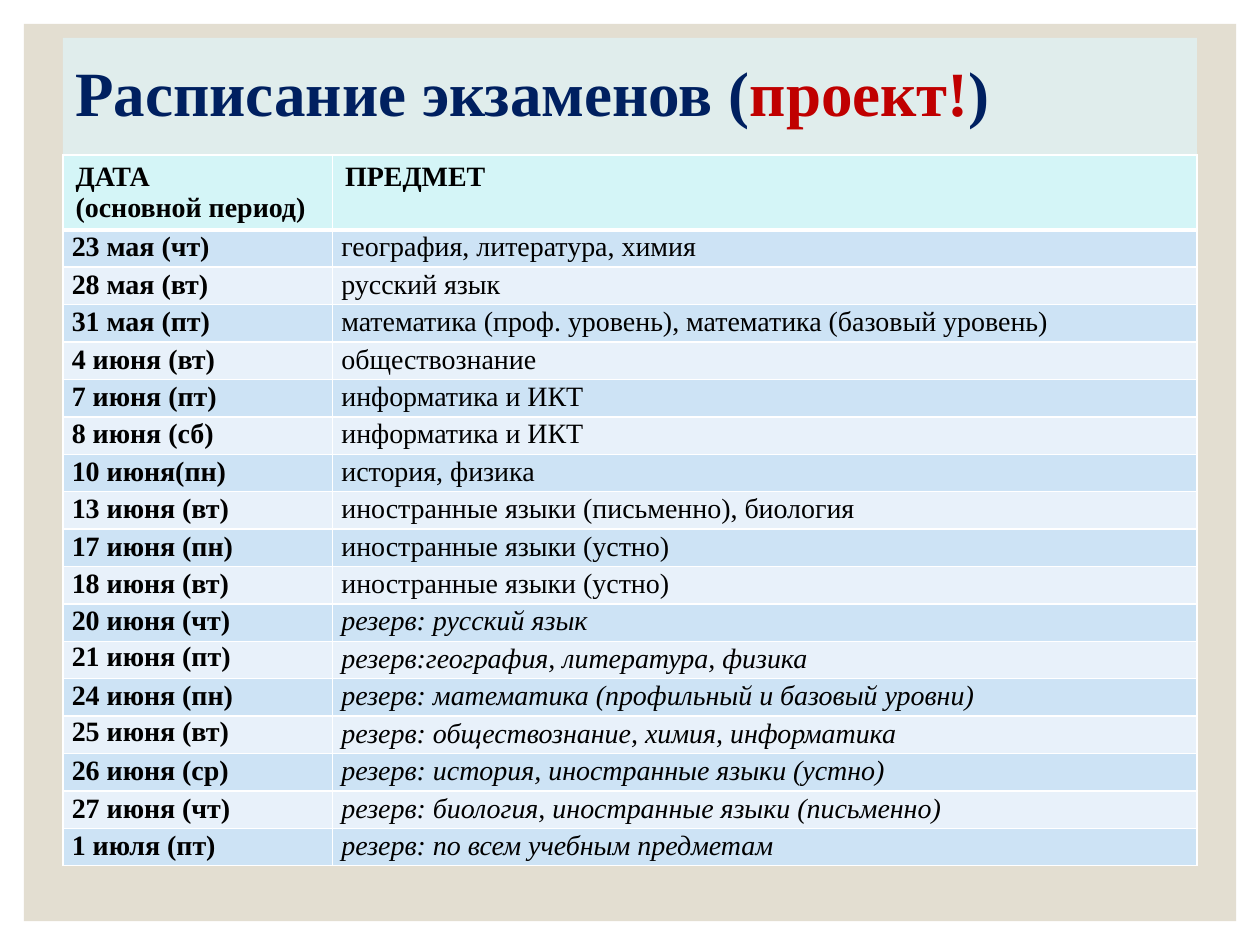
"""Build a slide with the exam timetable."""
from lxml.etree import SubElement
from pptx import Presentation
from pptx.dml.color import RGBColor
from pptx.enum.shapes import MSO_SHAPE as SHAPE
from pptx.enum.text import MSO_ANCHOR as ANCHOR, PP_ALIGN as ALIGN
from pptx.oxml.ns import qn
from pptx.util import Inches, Pt

SAND = RGBColor(0xE3, 0xDE, 0xD1)
MIST = RGBColor(0xE0, 0xED, 0xEC)
NAVY = RGBColor(0x00, 0x20, 0x60)
RED = RGBColor(0xC0, 0x00, 0x00)
BLACK = RGBColor(0x00, 0x00, 0x00)
WHITE = RGBColor(0xFF, 0xFF, 0xFF)
AQUA = RGBColor(0xD4, 0xF5, 0xF7)
BLUE = RGBColor(0xCD, 0xE3, 0xF5)
PALE = RGBColor(0xE8, 0xF1, 0xFA)

EXAMS = [
    ("23 мая (чт)", "география, литература, химия"),
    ("28 мая (вт)", "русский язык"),
    ("31 мая (пт)", "математика (проф. уровень), математика (базовый уровень)"),
    ("4 июня (вт)", "обществознание"),
    ("7 июня (пт)", "информатика и ИКТ"),
    ("8 июня (сб)", "информатика и ИКТ"),
    ("10 июня(пн)", "история, физика"),
    ("13 июня (вт)", "иностранные языки (письменно), биология"),
    ("17 июня (пн)", "иностранные языки (устно)"),
    ("18 июня (вт)", "иностранные языки (устно)"),
    ("20 июня (чт)", "резерв: русский язык"),
    ("21 июня (пт)", "резерв:география, литература, физика"),
    ("24 июня (пн)", "резерв: математика (профильный и базовый уровни)"),
    ("25 июня (вт)", "резерв: обществознание, химия, информатика"),
    ("26 июня (ср)", "резерв: история, иностранные языки (устно)"),
    ("27 июня (чт)", "резерв: биология, иностранные языки (письменно)"),
    ("1 июля (пт)", "резерв: по всем учебным предметам"),
]
SINGLE_SPACED = ("21 июня (пт)", "25 июня (вт)")
HEADER = ("ДАТА\n(основной период)", "ПРЕДМЕТ")
HEADER_H, TABLE_H = 0.59, 5.64


def add_run(p, text, size, color, bold=True, italic=False):
    r = p.add_run()
    r.text = text
    font = {"name": "Times New Roman", "size": Pt(size), "bold": bold, "italic": italic}
    for name, value in font.items():
        setattr(r.font, name, value)
    r.font.color.rgb = color


def style_cell(cell, color, bottom, inset_x, inset_y):
    tc_pr = cell._tc.get_or_add_tcPr()
    for side, width in (("lnL", 1), ("lnR", 1), ("lnT", 1), ("lnB", bottom)):
        ln = SubElement(tc_pr, qn(f"a:{side}"), w=str(Pt(width)))
        SubElement(SubElement(ln, qn("a:solidFill")), qn("a:srgbClr"), val=str(WHITE))
    cell.fill.solid()
    cell.fill.fore_color.rgb = color
    cell.margin_left = cell.margin_right = Inches(inset_x)
    cell.margin_top = cell.margin_bottom = Inches(inset_y)


prs = Presentation()
prs.slide_width, prs.slide_height = Inches(10), Inches(7.5)
s = prs.slides.add_slide(prs.slide_layouts[6])

for box, color in (((0.19, 0.19, 9.62, 7.12), SAND), ((0.5, 0.3, 9, 0.93), MIST)):
    sp = s.shapes.add_shape(SHAPE.RECTANGLE, *map(Inches, box))
    sp.shadow.inherit = False
    sp.fill.solid()
    sp.fill.fore_color.rgb = color
    sp.line.fill.background()

tf = sp.text_frame
tf.word_wrap = True
tf.vertical_anchor = ANCHOR.MIDDLE
p = tf.paragraphs[0]
p.alignment = ALIGN.LEFT
p.line_spacing = 0.9
for text, color in (("Расписание экзаменов (", NAVY), ("проект!", RED), (")", NAVY)):
    add_run(p, text, 36, color)

table = s.shapes.add_table(
    len(EXAMS) + 1, 2, Inches(0.5), Inches(1.23), Inches(9), Inches(TABLE_H)
).table
for col, width in zip(table.columns, (2.14, 6.86)):
    col.width = Inches(width)
for row in table.rows:
    row.height = Inches((TABLE_H - HEADER_H) / len(EXAMS))
table.rows[0].height = Inches(HEADER_H)

for j, text in enumerate(HEADER):
    cell = table.cell(0, j)
    style_cell(cell, AQUA, 3, 0.1, 0.05)
    for n, line in enumerate(text.split("\n")):
        p = cell.text_frame.add_paragraph() if n else cell.text_frame.paragraphs[0]
        add_run(p, line, 16, BLACK)

for i, exam in enumerate(EXAMS, 1):
    for j, text in enumerate(exam):
        cell = table.cell(i, j)
        style_cell(cell, BLUE if i % 2 else PALE, 1, 0.07, 0)
        p = cell.text_frame.paragraphs[0]
        p.space_before = p.space_after = Pt(10.5)
        if text not in SINGLE_SPACED:
            p.line_spacing = 1.07
        add_run(p, text, 16, BLACK, bold=j == 0, italic=text.startswith("резерв"))

prs.save("out.pptx")
